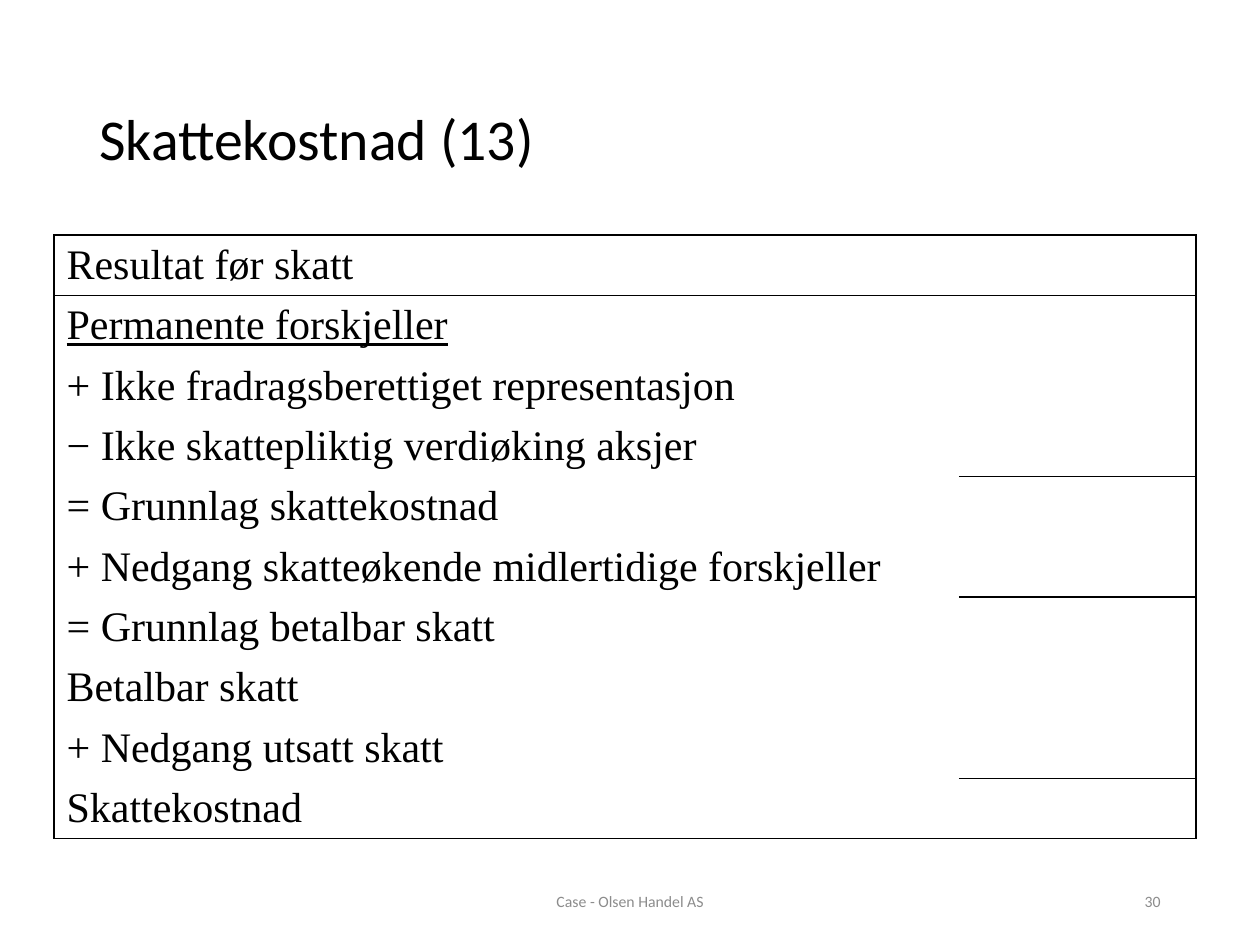
from lxml import etree
from pptx import Presentation
from pptx import util as u
from pptx.dml.color import RGBColor
from pptx.enum import text
from pptx.oxml import ns

SCALE = 914400 // 126
BLACK = RGBColor(0, 0, 0)
GRAY = RGBColor(0x8C, 0x8C, 0x8C)
LEFT, CENTER, RIGHT = text.PP_ALIGN.LEFT, text.PP_ALIGN.CENTER, text.PP_ALIGN.RIGHT

TITLE = {"name": "Calibri", "size": u.Pt(33)}
FOOTER = {"name": "Calibri", "size": u.Pt(9)}
BODY = {"name": "Times New Roman", "size": u.Pt(24)}
HEADING = {**BODY, "underline": True}

ROWS = [
    ("Resultat før skatt", BODY),
    ("Permanente forskjeller", HEADING),
    ("+ Ikke fradragsberettiget representasjon", BODY),
    ("− Ikke skattepliktig verdiøking aksjer", BODY),
    ("= Grunnlag skattekostnad", BODY),
    ("+ Nedgang skatteøkende midlertidige forskjeller", BODY),
    ("= Grunnlag betalbar skatt", BODY),
    ("Betalbar skatt", BODY),
    ("+ Nedgang utsatt skatt", BODY),
    ("Skattekostnad", BODY),
]
FULL_RULES = {0, 1, len(ROWS)}
SUM_RULES = FULL_RULES | {4, 6, 9}


def px(length):
    return u.Emu(length * SCALE)


class SlideBuilder:
    def __init__(self, deck):
        self.slide = deck.slides.add_slide(deck.slide_layouts[6])

    def style(self, font, values, color):
        for key, value in values.items():
            setattr(font, key, value)
        font.color.rgb = color

    def text(self, left, top, width, height, words, values, color, align=LEFT, spacing=1):
        box = self.slide.shapes.add_textbox(*map(px, (left, top, width, height)))
        frame = box.text_frame
        frame.word_wrap = True
        frame.vertical_anchor = text.MSO_ANCHOR.MIDDLE
        para = frame.paragraphs[0]
        para.alignment, para.line_spacing = align, spacing
        span = para.add_run()
        span.text = words
        self.style(span.font, values, color)

    def borders(self, cell, edges):
        properties = cell._tc.get_or_add_tcPr()
        for index, edge in enumerate("LRTB"):
            line = etree.Element(ns.qn(f"a:ln{edge}"), w=str(u.Pt(1)))
            if edge in edges:
                fill = etree.SubElement(line, ns.qn("a:solidFill"))
                etree.SubElement(fill, ns.qn("a:srgbClr"), val=str(BLACK))
            else:
                etree.SubElement(line, ns.qn("a:noFill"))
            properties.insert(index, line)

    def table(self, left, top, widths, row_height, rows):
        size = sum(widths), row_height * len(rows)
        frame = self.slide.shapes.add_table(
            len(rows), len(widths), *map(px, (left, top, *size)))
        table = frame.table
        table.first_row = table.horz_banding = False
        for column, width in zip(table.columns, widths):
            column.width = px(width)
        for row_index, (words, values) in enumerate(rows):
            table.rows[row_index].height = px(row_height)
            for column_index, rules in enumerate((FULL_RULES, SUM_RULES)):
                cell = table.cell(row_index, column_index)
                cell.margin_top = cell.margin_bottom = px(5)
                cell.vertical_anchor = text.MSO_ANCHOR.MIDDLE
                cell.fill.background()
                edges = "LR"[column_index]
                edges += "T" if row_index in rules else ""
                edges += "B" if row_index + 1 in rules else ""
                self.borders(cell, edges)
                if column_index == 0:
                    span = cell.text_frame.paragraphs[0].add_run()
                    span.text = words
                    self.style(span.font, values, BLACK)


def main():
    deck = Presentation()
    deck.slide_width, deck.slide_height = px(1260), px(945)
    page = SlideBuilder(deck)
    page.text(87, 50, 1086, 183, "Skattekostnad (13)", TITLE, BLACK, spacing=0.9)
    page.table(54, 235, (905, 237), 59, ROWS)
    page.text(417, 876, 426, 50, "Case - Olsen Handel AS", FOOTER, GRAY, CENTER)
    page.text(890, 876, 283, 50, "30", FOOTER, GRAY, RIGHT)
    deck.save("out.pptx")


if __name__ == "__main__":
    main()
